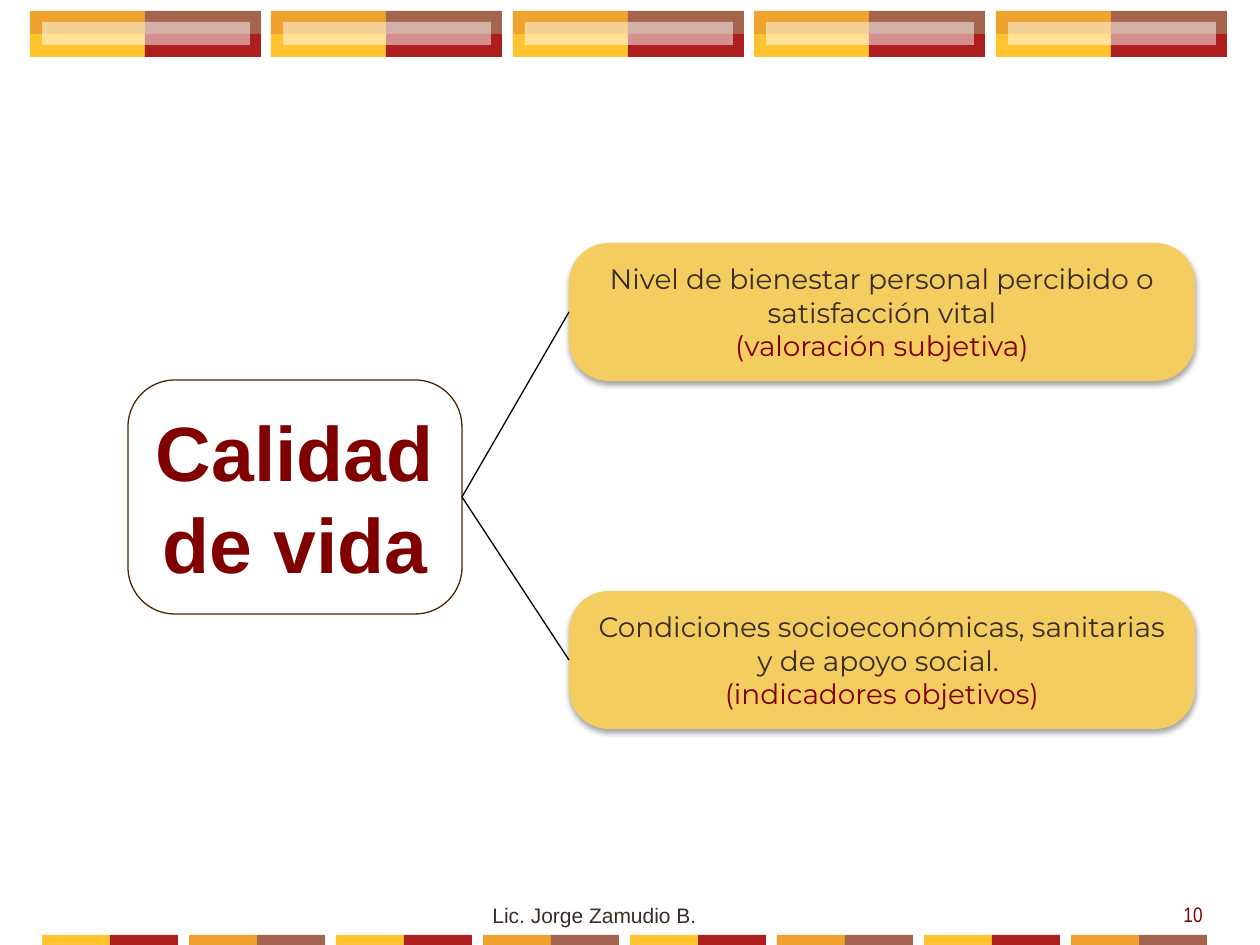
from dataclasses import dataclass

import lxml.etree
import pptx
import pptx.dml.color
import pptx.enum.shapes
import pptx.enum.text
import pptx.oxml.ns
import pptx.shapes.autoshape
import pptx.shapes.connector
import pptx.slide
import pptx.text.text
import pptx.util

RGBColor = pptx.dml.color.RGBColor
SHAPES = pptx.enum.shapes.MSO_SHAPE
ALIGN = pptx.enum.text.PP_ALIGN
ANCHOR = pptx.enum.text.MSO_ANCHOR

PX_PER_INCH = 126
ORANGE = RGBColor(0xF0, 0xA2, 0x2E)
BROWN = RGBColor(0xA5, 0x64, 0x4E)
YELLOW = RGBColor(0xFF, 0xC4, 0x2F)
RED = RGBColor(0xAD, 0x1F, 0x1F)
WHITE = RGBColor(0xFF, 0xFF, 0xFF)
BLACK = RGBColor(0x00, 0x00, 0x00)
GOLD = RGBColor(0xF3, 0xCD, 0x60)
OUTLINE = RGBColor(0x4C, 0x26, 0x00)
MAROON = RGBColor(0x80, 0x00, 0x00)
INK = RGBColor(0x3B, 0x2C, 0x24)


@dataclass(frozen=True)
class Box:
    left: int
    top: int
    width: int
    height: int

    def emu(self) -> list[pptx.util.Emu]:
        return [px(n) for n in (self.left, self.top, self.width, self.height)]


@dataclass(frozen=True)
class Style:
    font: str
    size: int
    color: RGBColor
    bold: bool = False


@dataclass(frozen=True)
class Dimension:
    top: int
    description: str
    measure: str


CONCEPT_STYLE = Style("Arial", 44, MAROON, True)
DESCRIPTION_STYLE = Style("Montserrat", 16, INK)
MEASURE_STYLE = Style("Montserrat", 16, MAROON)
NUMBER_STYLE = Style("Arial Narrow", 12, MAROON)
AUTHOR_STYLE = Style("Arial", 12, INK)
DIMENSIONS = (
    Dimension(243, "Nivel de bienestar personal percibido o satisfacción vital", "(valoración subjetiva)"),
    Dimension(591, "Condiciones socioeconómicas, sanitarias y de apoyo social. ", "(indicadores objetivos)"),
)


def px(length: int) -> pptx.util.Emu:
    """Turn pixels into EMU."""
    return pptx.util.Emu(round(length * 914400 / PX_PER_INCH))


def add_bar(slide: pptx.slide.Slide, box: Box, color: RGBColor, opacity: int = 100) -> None:
    """Draw a borderless coloured bar."""
    bar = slide.shapes.add_shape(SHAPES.RECTANGLE, *box.emu())
    bar.shadow.inherit = False
    bar.line.fill.background()
    bar.fill.solid()
    bar.fill.fore_color.rgb = color
    if opacity < 100:
        solid = bar.fill._xPr.find(pptx.oxml.ns.qn("a:solidFill"))
        lxml.etree.SubElement(solid[0], pptx.oxml.ns.qn("a:alpha"), val=str(opacity * 1000))


def add_top_band(slide: pptx.slide.Slide) -> None:
    """Draw the five four-colour tiles with their pale strips."""
    for index in range(5):
        left = 30 + index * 483 // 2
        for color, dx, dy in ((YELLOW, 0, 23), (ORANGE, 0, 0), (BROWN, 115, 0), (RED, 115, 23)):
            add_bar(slide, Box(left + dx, 11 + dy, 116, 23), color)
        add_bar(slide, Box(left + 12, 22, 208, 23), WHITE, 50)


def add_bottom_band(slide: pptx.slide.Slide) -> None:
    """Draw the eight alternating two-colour dashes."""
    for index in range(8):
        pair = (ORANGE, BROWN) if index % 2 else (YELLOW, RED)
        for half, color in enumerate(pair):
            add_bar(slide, Box(42 + index * 147 + half * 68, 935, 68, 10), color)


def write(frame: pptx.text.text.TextFrame, lines: list[tuple[str, Style]], align: ALIGN = ALIGN.CENTER) -> None:
    """Fill a frame with one styled paragraph per line."""
    frame.text = "\n".join(text for text, _ in lines)
    for paragraph, (_, style) in zip(frame.paragraphs, lines):
        paragraph.alignment = align
        for run in paragraph.runs:
            run.font.name = style.font
            run.font.size = pptx.util.Pt(style.size)
            run.font.bold = style.bold
            run.font.color.rgb = style.color


def add_node(
    slide: pptx.slide.Slide, box: Box, rounding: float, lines: list[tuple[str, Style]]
) -> pptx.shapes.autoshape.Shape:
    """Draw a rounded node with centred text."""
    node = slide.shapes.add_shape(SHAPES.ROUNDED_RECTANGLE, *box.emu())
    node.adjustments[0] = rounding
    node.shadow.inherit = False
    node.text_frame.word_wrap = True
    node.text_frame.vertical_anchor = ANCHOR.MIDDLE
    write(node.text_frame, lines)
    return node


def add_concept(slide: pptx.slide.Slide) -> pptx.shapes.autoshape.Shape:
    """Draw the outlined central concept."""
    concept = add_node(slide, Box(128, 380, 334, 234), 0.2, [("Calidad de vida", CONCEPT_STYLE)])
    concept.fill.background()
    concept.line.color.rgb = OUTLINE
    concept.line.width = pptx.util.Pt(0.75)
    return concept


def add_dimension(slide: pptx.slide.Slide, dimension: Dimension) -> pptx.shapes.autoshape.Shape:
    """Draw a gold dimension with a soft shadow below."""
    lines = [(dimension.description, DESCRIPTION_STYLE), (dimension.measure, MEASURE_STYLE)]
    node = add_node(slide, Box(569, dimension.top, 626, 138), 0.29, lines)
    node.fill.solid()
    node.fill.fore_color.rgb = GOLD
    node.line.fill.background()
    qn = pptx.oxml.ns.qn
    effects = node._element.spPr.find(qn("a:effectLst"))
    shadow = lxml.etree.SubElement(
        effects, qn("a:outerShdw"), blurRad="39370", dist="22860", dir="5400000", rotWithShape="0"
    )
    color = lxml.etree.SubElement(shadow, qn("a:srgbClr"), val=str(BLACK))
    lxml.etree.SubElement(color, qn("a:alpha"), val="35000")
    return node


def add_branch(
    slide: pptx.slide.Slide, concept: pptx.shapes.autoshape.Shape, dimension: pptx.shapes.autoshape.Shape
) -> pptx.shapes.connector.Connector:
    """Join the concept to one dimension."""
    branch = slide.shapes.add_connector(pptx.enum.shapes.MSO_CONNECTOR.STRAIGHT, 0, 0, 0, 0)
    branch.begin_connect(concept, 3)
    branch.end_connect(dimension, 1)
    branch.line.color.rgb = BLACK
    branch.line.width = pptx.util.Pt(0.75)
    lxml.etree.SubElement(branch._element.spPr, pptx.oxml.ns.qn("a:effectLst"))
    return branch


def add_label(
    slide: pptx.slide.Slide, box: Box, text: str, style: Style, align: ALIGN, anchor: ANCHOR, wrap: bool
) -> None:
    """Write a footer label."""
    label = slide.shapes.add_textbox(*box.emu())
    label.text_frame.word_wrap = wrap
    label.text_frame.vertical_anchor = anchor
    write(label.text_frame, [(text, style)], align)


def main() -> None:
    """Build the quality of life slide."""
    presentation = pptx.Presentation()
    presentation.slide_width, presentation.slide_height = px(1260), px(945)
    slide = presentation.slides.add_slide(presentation.slide_layouts[6])
    add_top_band(slide)
    add_bottom_band(slide)
    concept = add_concept(slide)
    dimensions = [add_dimension(slide, dimension) for dimension in DIMENSIONS]
    for dimension in dimensions:
        add_branch(slide, concept, dimension)
    add_label(slide, Box(1159, 888, 68, 52), "10", NUMBER_STYLE, ALIGN.CENTER, ANCHOR.MIDDLE, True)
    add_label(slide, Box(480, 896, 232, 38), "Lic. Jorge Zamudio B.", AUTHOR_STYLE, ALIGN.LEFT, ANCHOR.TOP, False)
    presentation.save("out.pptx")


if __name__ == "__main__":
    main()
